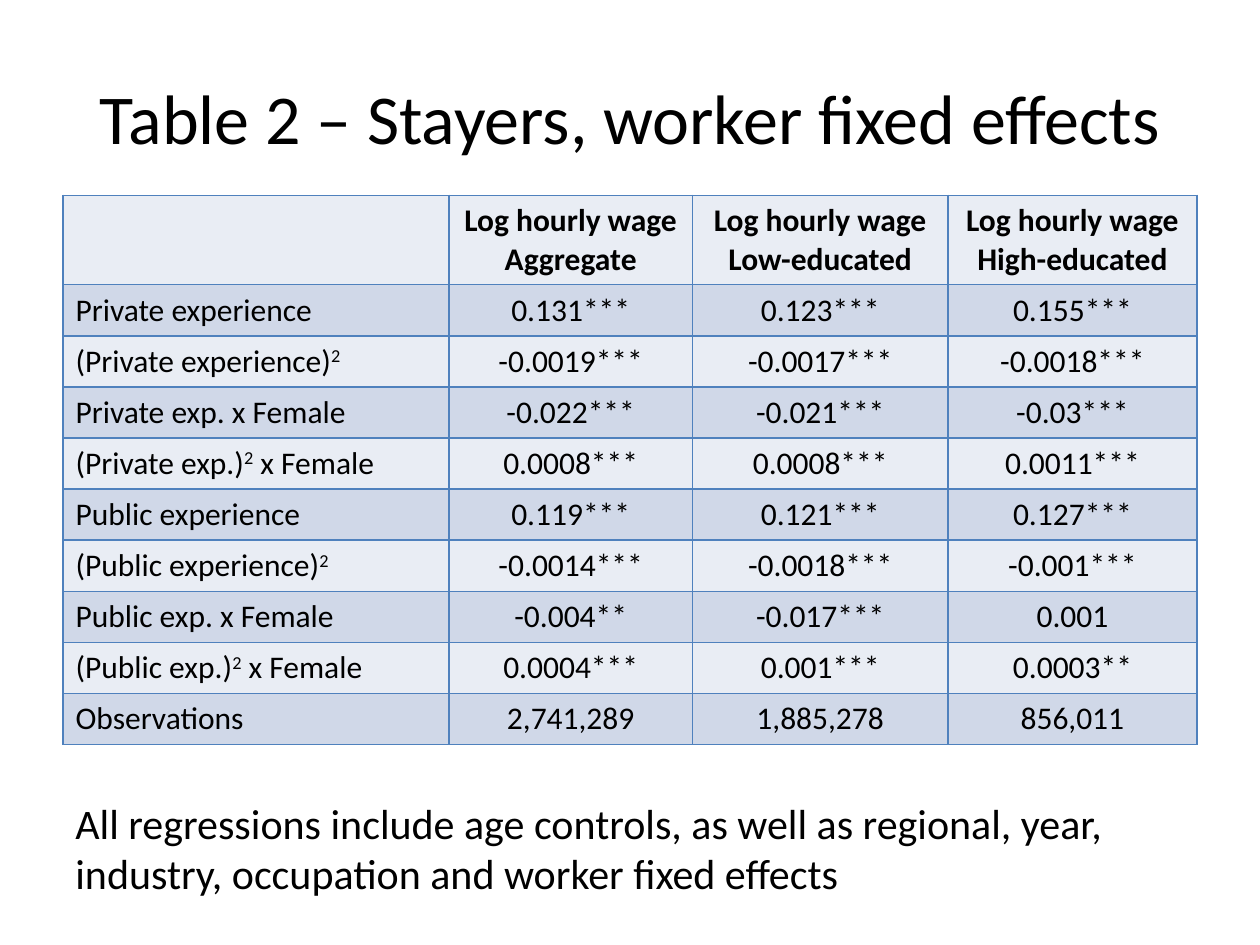
"""Build the slide with the regression table for stayers."""
from lxml.etree import SubElement
from pptx import Presentation
from pptx.dml.color import RGBColor
from pptx.enum.text import MSO_ANCHOR as Anchor, PP_ALIGN as Align
from pptx.oxml.ns import qn
from pptx.util import Cm, Pt

TITLE = "Table 2 – Stayers, worker fixed effects"
NOTE = ("All regressions include age controls, as well as regional, year, "
        "industry, occupation and worker fixed effects")
OUTCOME = "Log hourly wage"
SAMPLES = ["Aggregate", "Low-educated", "High-educated"]
ESTIMATES = [
    ("Private experience", "0.131***", "0.123***", "0.155***"),
    ("(Private experience)^2", "-0.0019***", "-0.0017***", "-0.0018***"),
    ("Private exp. x Female", "-0.022***", "-0.021***", "-0.03***"),
    ("(Private exp.)^2 x Female", "0.0008***", "0.0008***", "0.0011***"),
    ("Public experience", "0.119***", "0.121***", "0.127***"),
    ("(Public experience)^2", "-0.0014***", "-0.0018***", "-0.001***"),
    ("Public exp. x Female", "-0.004**", "-0.017***", "0.001"),
    ("(Public exp.)^2 x Female", "0.0004***", "0.001***", "0.0003**"),
    ("Observations", "2,741,289", "1,885,278", "856,011"),
]
COLUMN_WIDTHS = [7.78, 4.91, 5.15, 5.02]
HEADER_HEIGHT, ROW_HEIGHT = 1.8, 1.03
LEFT, WIDTH = 1.27, 22.86
BANDS = ["E9EDF4", "D0D8E8"]
BORDER, INK = "4F81BD", "000000"
FONT = "Calibri"


def color(hex_code):
    return RGBColor.from_string(hex_code)


def write(frame, lines, size, align=Align.LEFT, bold=False):
    for index, line in enumerate(lines):
        paragraph = frame.paragraphs[0] if index == 0 else frame.add_paragraph()
        paragraph.alignment = align
        font = paragraph.font
        font.name, font.size, font.bold = FONT, Pt(size), bold
        font.color.rgb = color(INK)
        base, power, rest = line.partition("^2")
        paragraph.add_run().text = base
        if power:
            exponent = paragraph.add_run()
            exponent.text = "2"
            exponent._r.get_or_add_rPr().set("baseline", "30000")
        if rest:
            paragraph.add_run().text = rest


def add_text(slide, top, width, height, text, size, align, anchor):
    box = slide.shapes.add_textbox(Cm(LEFT), Cm(top), Cm(width), Cm(height))
    frame = box.text_frame
    frame.word_wrap = True
    frame.vertical_anchor = anchor
    write(frame, [text], size, align)


def add_borders(cell):
    properties = cell._tc.get_or_add_tcPr()
    for side in ("a:lnL", "a:lnR", "a:lnT", "a:lnB"):
        line = SubElement(properties, qn(side), w=str(Pt(1)))
        fill = SubElement(line, qn("a:solidFill"))
        SubElement(fill, qn("a:srgbClr"), val=BORDER)


def add_estimates(slide):
    header = [[]] + [[OUTCOME, sample] for sample in SAMPLES]
    rows = [header] + [[[text] for text in row] for row in ESTIMATES]
    heights = [HEADER_HEIGHT] + [ROW_HEIGHT] * len(ESTIMATES)
    table = slide.shapes.add_table(
        len(rows), len(COLUMN_WIDTHS), Cm(LEFT), Cm(3.94),
        Cm(WIDTH), Cm(sum(heights))).table
    for column, width in zip(table.columns, COLUMN_WIDTHS):
        column.width = Cm(width)
    for r, (row, height) in enumerate(zip(rows, heights)):
        table.rows[r].height = Cm(height)
        for c, lines in enumerate(row):
            cell = table.cell(r, c)
            add_borders(cell)
            cell.fill.solid()
            cell.fill.fore_color.rgb = color(BANDS[r % 2])
            write(cell.text_frame, lines, 18,
                  Align.CENTER if c else Align.LEFT, bold=r == 0)


def main():
    deck = Presentation()
    deck.slide_width, deck.slide_height = Cm(25.4), Cm(19.05)
    slide = deck.slides.add_slide(deck.slide_layouts[6])
    add_text(slide, 0.76, WIDTH, 3.18, TITLE, 40, Align.CENTER, Anchor.MIDDLE)
    add_estimates(slide)
    add_text(slide, 15.95, 22.23, 2.31, NOTE, 24, Align.LEFT, Anchor.TOP)
    deck.save("out.pptx")


if __name__ == "__main__":
    main()
